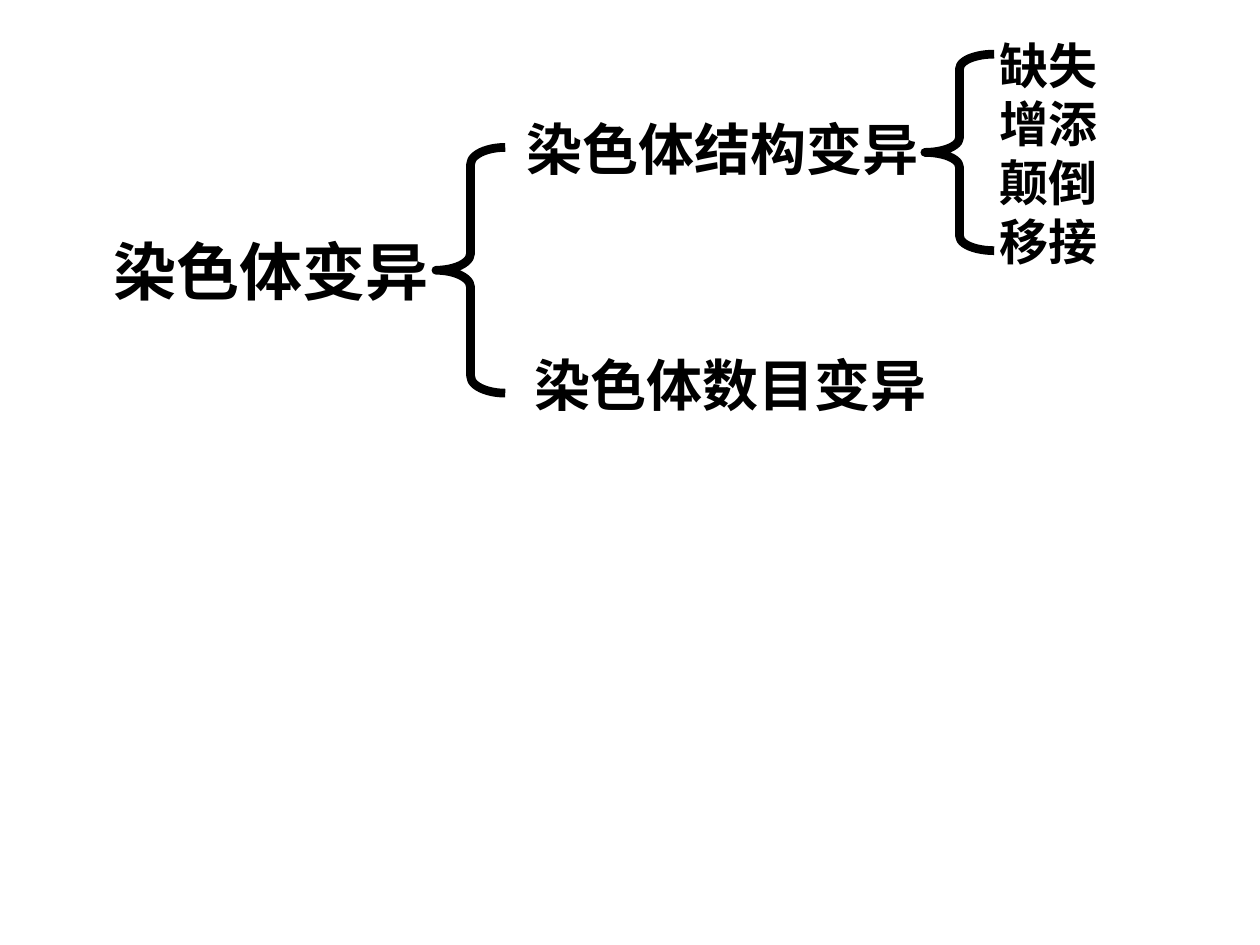
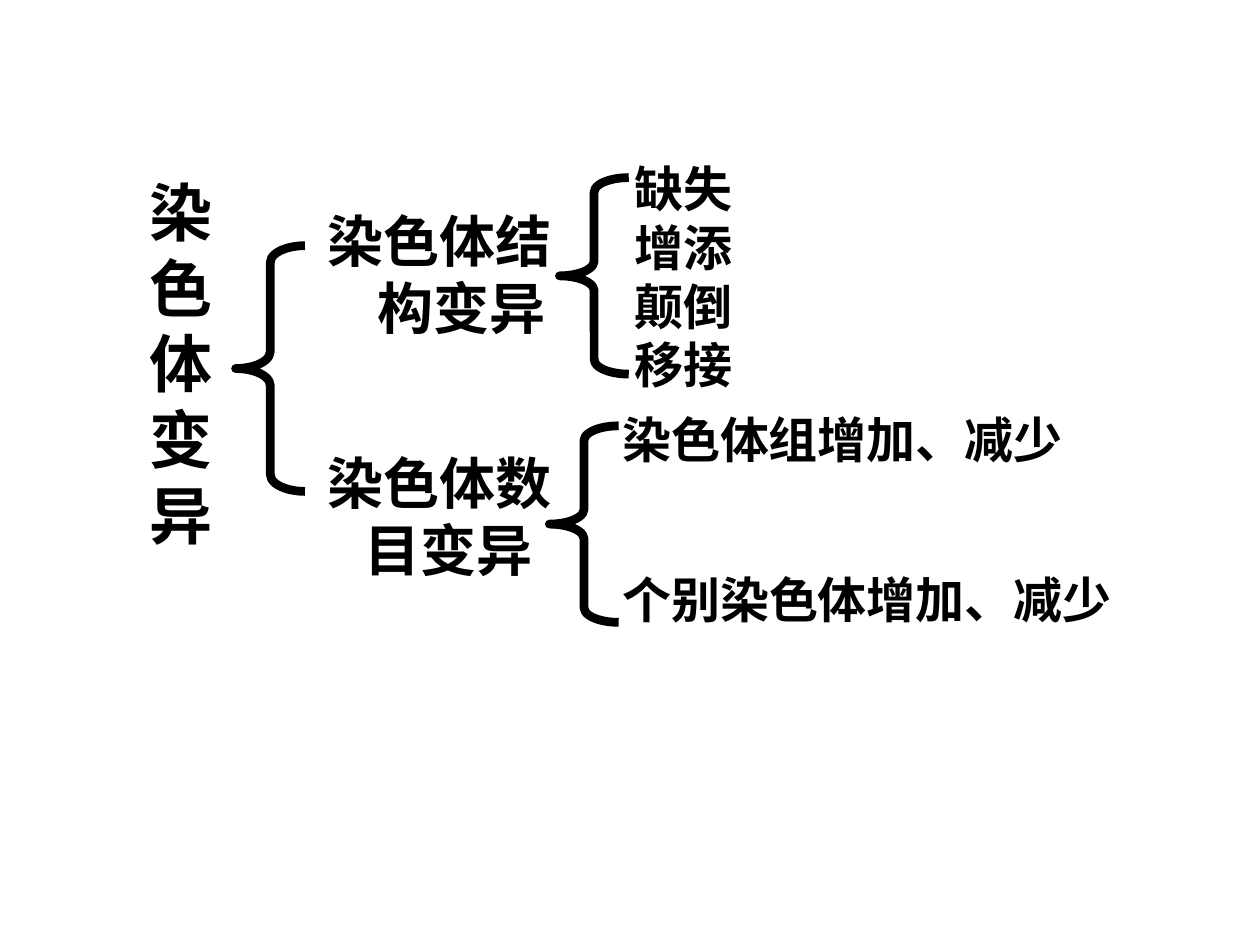
from pptx import Presentation
from pptx.dml.color import RGBColor
from pptx.enum.shapes import MSO_SHAPE as Shape
from pptx.enum.text import MSO_AUTO_SIZE as Fit
from pptx.oxml.ns import qn
from pptx.util import Pt
from lxml.etree import SubElement

FACE = "Noto Sans CJK SC"
INK = "000000"
ROOT, KIND, ITEM = 36, 32, 28  # text sizes by level of the tree
LEAD = 1.2
BIG = {"high": 140.4, "curl": 0.244}
SMALL = {"high": 112.32, "curl": 0.212}
NAME = "染色体变异"
FORMS = ["缺失", "增添", "颠倒", "移接"]


def color(code):
    return RGBColor.from_string(code)


def label(slide, left, top, wide, size, lines, dent=0):
    """Add bold text, one paragraph a line; dent shifts the lines after the first."""
    high = len(lines) * size * LEAD + 7.2
    box = slide.shapes.add_textbox(Pt(left), Pt(top), Pt(wide), Pt(high))
    frame = box.text_frame
    frame.word_wrap = True
    frame.auto_size = Fit.SHAPE_TO_FIT_TEXT
    style = {"size": Pt(size), "bold": True, "name": FACE}
    for i, line in enumerate(lines):
        para = frame.paragraphs[0] if i == 0 else frame.add_paragraph()
        para.line_spacing = Pt(size * LEAD)
        if i and dent:
            para._p.get_or_add_pPr().set("marL", str(Pt(dent)))
        run = para.add_run()
        run.text = line
        for key, value in style.items():
            setattr(run.font, key, value)
        run.font.color.rgb = color(INK)
        SubElement(run._r.get_or_add_rPr(), qn("a:ea"), typeface=FACE)


def brace(slide, left, top, high, curl):
    mark = slide.shapes.add_shape(
        Shape.LEFT_BRACE, Pt(left), Pt(top), Pt(39.6), Pt(high))
    mark.shadow.inherit = False
    mark.adjustments[0] = curl
    mark.fill.background()
    mark.line.color.rgb = color(INK)
    mark.line.width = Pt(5)


def forms(slide, left, top):
    """List the structural changes behind their brace."""
    brace(slide, left, top, **SMALL)
    label(slide, left + 35.6, top - 14.4, 96, ITEM, FORMS)


def wide_tree(slide):
    brace(slide, 249.12, 84.24, **BIG)
    label(slide, 57.6, 129.6, 208, ROOT, [NAME])
    label(slide, 293.76, 61.92, 286.5, KIND, ["染色体结构变异"])
    label(slide, 298.08, 196.56, 343.4, KIND, ["染色体数目变异"])
    forms(slide, 528.48, 30.96)


def full_tree(slide):
    brace(slide, 134.64, 140.4, **BIG)
    # The narrow box wraps the name to one character a line.
    label(slide, 78.48, 95.76, 56.16, ROOT, [NAME])
    label(slide, 180, 114.48, 151.2, KIND, ["染色体结", "构变异"], 28.7)
    label(slide, 180, 252.72, 147, KIND, ["染色体数", "目变异"], 21.5)
    forms(slide, 319.68, 101.52)
    brace(slide, 313.92, 243.36, **SMALL)
    label(slide, 348.48, 230.4, 271.5, ITEM, ["染色体组增加、减少"])
    label(slide, 348.48, 321.84, 326, ITEM, ["个别染色体增加、减少"])


def main():
    deck = Presentation()
    deck.slide_width, deck.slide_height = Pt(720), Pt(540)
    for draw in (wide_tree, full_tree):
        draw(deck.slides.add_slide(deck.slide_layouts[6]))
    deck.save("out.pptx")


if __name__ == "__main__":
    main()
